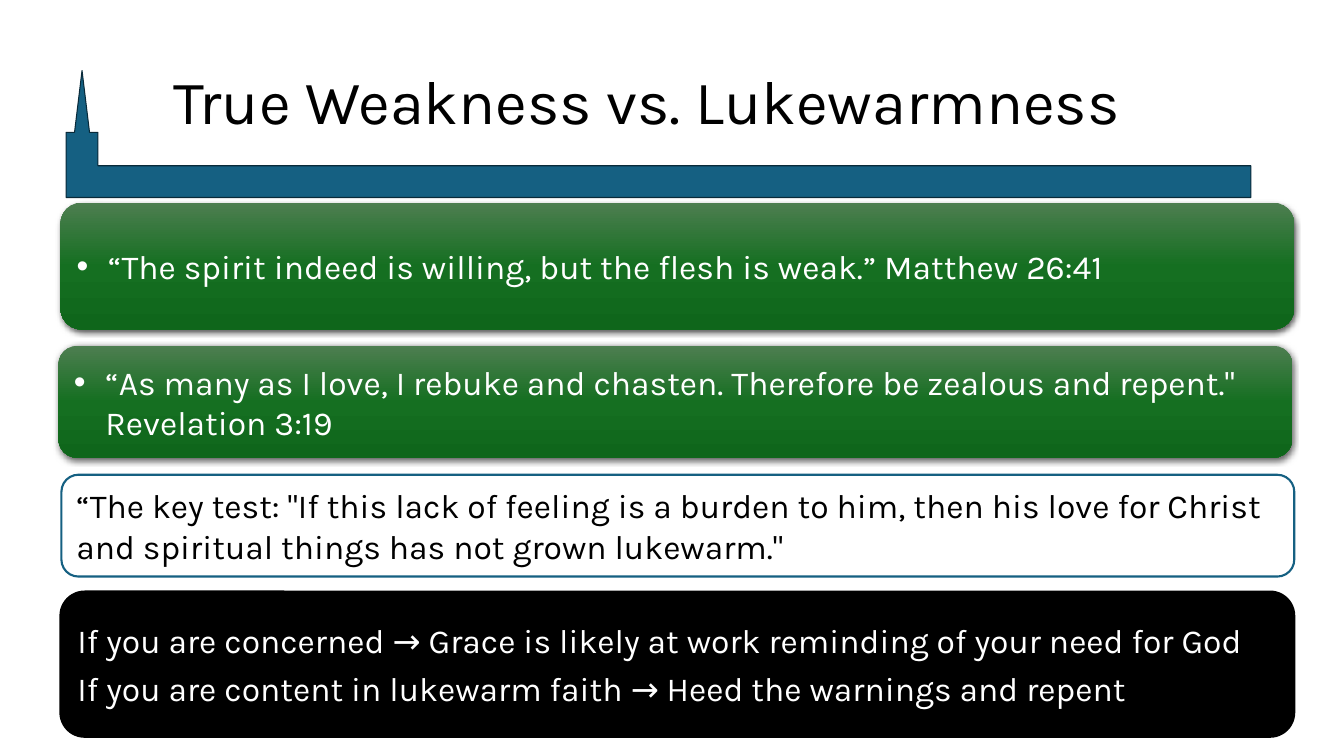
import pptx
import pptx.util
import pptx.dml.color
import pptx.enum.shapes
import pptx.enum.text
import pptx.oxml
import pptx.oxml.ns
from dataclasses import dataclass

TITLE = "True Weakness vs. Lukewarmness"
TITLE_BOX = (116.6, 29.5, 777.6, 90.7)
STEEPLE_BOX = (53.3, 50.4, 840.2, 90.7)
STEEPLE_ADJUSTMENTS = (0.25, 0.059, 0.487)

PANELS = [
    {"style": "verse", "box": (43.2, 144.7, 881.3, 90.7),
     "lines": ["“The spirit indeed is willing, but the flesh is weak.” Matthew 26:41"]},
    {"style": "verse", "box": (41.8, 247, 881.3, 79.9),
     "lines": ["“As many as I love, I rebuke and chasten. Therefore be zealous and repent.\" Revelation 3:19"]},
    {"style": "test", "box": (43.9, 339.1, 880.6, 72.7),
     "lines": ["“The key test: \"If this lack of feeling is a burden to him, then his love for Christ "
               "and spiritual things has not grown lukewarm.\""]},
    {"style": "answer", "box": (43.2, 422.6, 881.3, 103.7),
     "lines": ["If you are concerned → Grace is likely at work reminding of your need for God",
               "If you are content in lukewarm faith → Heed the warnings and repent"]},
]


@dataclass(frozen=True)
class Theme:
    font: str = "Karla"
    title_size: float = 44
    body_size: float = 24
    black: str = "000000"
    white: str = "FFFFFF"
    blue: str = "156082"
    navy: str = "092A39"
    greens: tuple = ((0, "4D7E50"), (50, "156F21"), (100, "0F661B"))


THEME = Theme()
STYLES = {
    "verse": {"fill": None, "line": None, "text": THEME.white},
    "test": {"fill": THEME.white, "line": THEME.blue, "text": THEME.black},
    "answer": {"fill": THEME.black, "line": THEME.black, "text": THEME.white},
}
NAMESPACE = pptx.oxml.ns.nsdecls("a")
Pt = pptx.util.Pt


def color(value):
    return pptx.dml.color.RGBColor.from_string(value)


def add_shape(slide, kind, box, fill, line, line_width):
    shape = slide.shapes.add_shape(kind, *map(Pt, box))
    shape.shadow.inherit = False
    if fill:
        shape.fill.solid()
        shape.fill.fore_color.rgb = color(fill)
    if line:
        shape.line.color.rgb = color(line)
        shape.line.width = Pt(line_width)
    else:
        shape.line.fill.background()
    return shape


def add_green_gradient(shape):
    stops = "".join(f'<a:gs pos="{position * 1000}"><a:srgbClr val="{value}"/></a:gs>'
                    for position, value in THEME.greens)
    gradient = pptx.oxml.parse_xml(
        f'<a:gradFill {NAMESPACE} rotWithShape="1"><a:gsLst>{stops}</a:gsLst>'
        '<a:lin ang="5400000" scaled="0"/></a:gradFill>')
    properties = shape.element.spPr
    properties.find(pptx.oxml.ns.qn("a:prstGeom")).addnext(gradient)


def add_soft_shadow(shape):
    effects = shape.element.spPr.find(pptx.oxml.ns.qn("a:effectLst"))
    effects.append(pptx.oxml.parse_xml(
        f'<a:outerShdw {NAMESPACE} blurRad="{Pt(4.5)}" dist="{Pt(1.5)}" dir="5400000" '
        f'algn="ctr" rotWithShape="0"><a:srgbClr val="{THEME.black}">'
        '<a:alpha val="63000"/></a:srgbClr></a:outerShdw>'))


def add_bullet(paragraph):
    properties = paragraph._p.get_or_add_pPr()
    properties.set("marL", str(Pt(22.5)))
    properties.set("indent", str(-Pt(22.5)))
    properties.append(pptx.oxml.parse_xml(f'<a:buFont {NAMESPACE} typeface="Arial"/>'))
    properties.append(pptx.oxml.parse_xml(f'<a:buChar {NAMESPACE} char="•"/>'))


def format_text(shape, size, text_color):
    frame = shape.text_frame
    frame.word_wrap = True
    frame.auto_size = pptx.enum.text.MSO_AUTO_SIZE.NONE
    frame.vertical_anchor = pptx.enum.text.MSO_ANCHOR.MIDDLE
    for index, paragraph in enumerate(frame.paragraphs):
        paragraph.alignment = pptx.enum.text.PP_ALIGN.LEFT
        paragraph.space_before = Pt(6 if index else 0)
        for run in paragraph.runs:
            run.font.name = THEME.font
            run.font.size = Pt(size)
            run.font.color.rgb = color(text_color)


def add_title(slide):
    title = slide.shapes.title
    title.left, title.top, title.width, title.height = map(Pt, TITLE_BOX)
    title.text_frame.text = TITLE
    title.text_frame.paragraphs[0].line_spacing = 0.9
    format_text(title, THEME.title_size, THEME.black)
    return title


def add_steeple(slide, title):
    steeple = add_shape(slide, pptx.enum.shapes.MSO_SHAPE.BENT_UP_ARROW, STEEPLE_BOX,
                        THEME.blue, THEME.navy, 0.75)
    for index, value in enumerate(STEEPLE_ADJUSTMENTS):
        steeple.adjustments[index] = value
    steeple.element.spPr.xfrm.set("flipH", "1")
    title.element.addprevious(steeple.element)


def add_panel(slide, panel):
    style = STYLES[panel["style"]]
    shape = add_shape(slide, pptx.enum.shapes.MSO_SHAPE.ROUNDED_RECTANGLE, panel["box"],
                      style["fill"], style["line"], 1.5)
    shape.text_frame.text = "\n".join(panel["lines"])
    if panel["style"] == "verse":
        add_green_gradient(shape)
        add_soft_shadow(shape)
        for paragraph in shape.text_frame.paragraphs:
            add_bullet(paragraph)
    format_text(shape, THEME.body_size, style["text"])


def main():
    presentation = pptx.Presentation()
    presentation.slide_width = Pt(960)
    presentation.slide_height = Pt(540)
    slide = presentation.slides.add_slide(presentation.slide_layouts[5])
    title = add_title(slide)
    add_steeple(slide, title)
    for panel in PANELS:
        add_panel(slide, panel)
    presentation.save("out.pptx")


if __name__ == "__main__":
    main()
